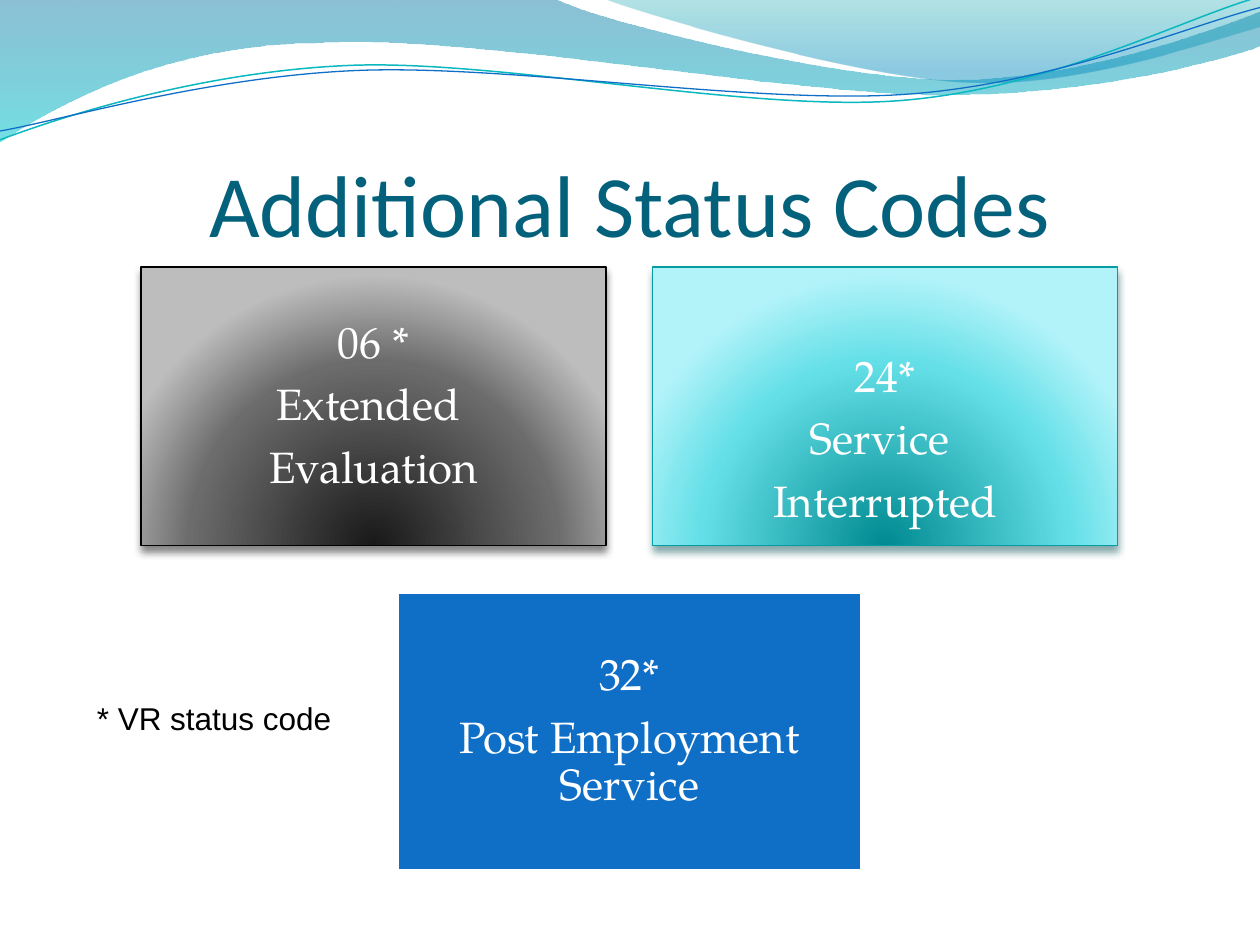
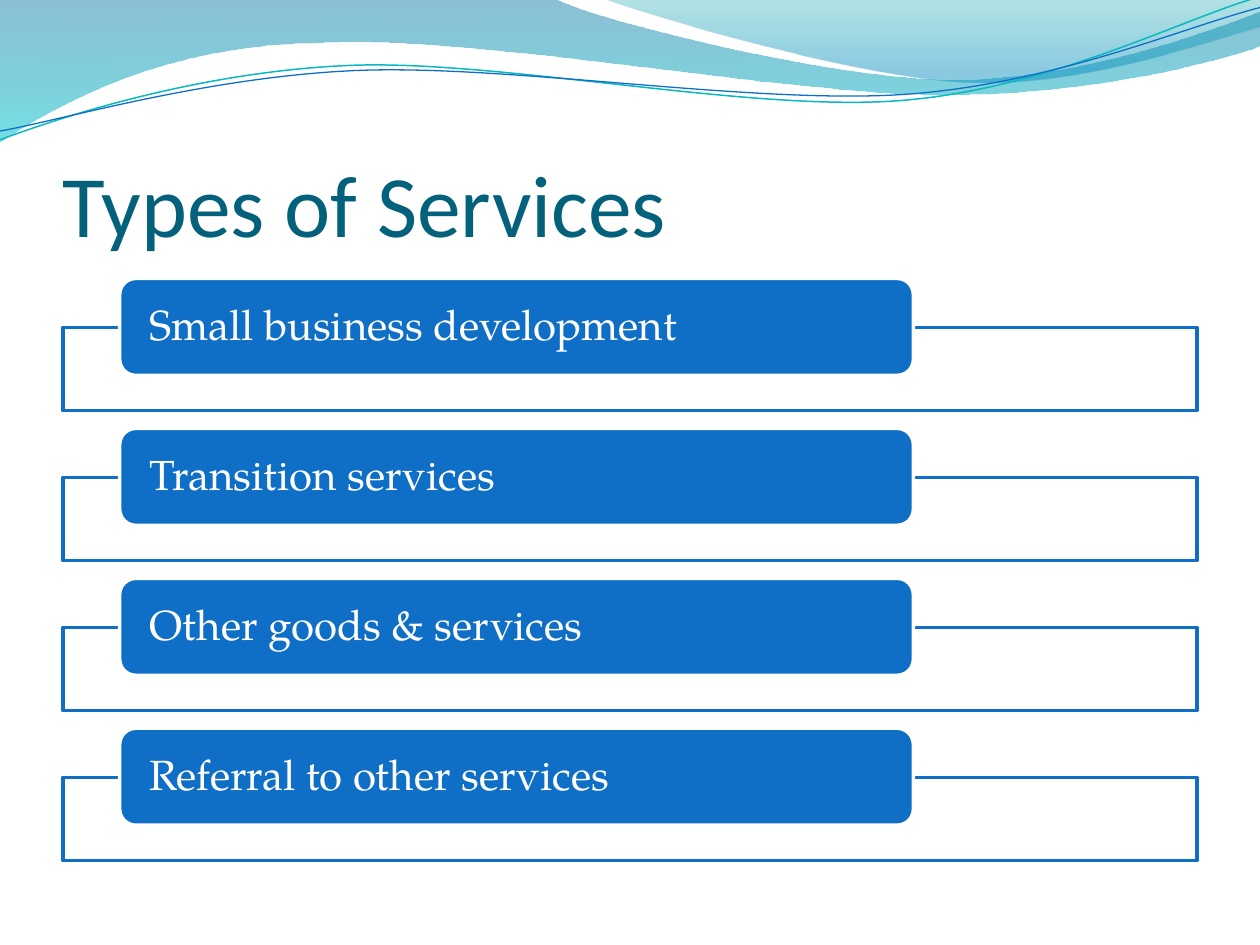
from lxml import etree
from pptx import Presentation
from pptx.dml.color import RGBColor
from pptx.enum.shapes import MSO_SHAPE
from pptx.enum.text import MSO_ANCHOR, PP_ALIGN
from pptx.oxml.ns import qn
from pptx.util import Inches, Pt

RECTANGLE, ROUNDED = MSO_SHAPE.RECTANGLE, MSO_SHAPE.ROUNDED_RECTANGLE
LEFT, CENTER = PP_ALIGN.LEFT, PP_ALIGN.CENTER
TOP, MIDDLE, BOTTOM = MSO_ANCHOR.TOP, MSO_ANCHOR.MIDDLE, MSO_ANCHOR.BOTTOM

BLUE, TEAL, TITLE_COLOR = "0F6FC6", "0AB8BF", "04617B"
WHITE, BLACK = "FFFFFF", "000000"
TITLE_FONT, BODY_FONT, NOTE_FONT = "Calibri", "TeX Gyre Pagella", "Arial"

# Outlines: a start point, then (x, y) for a line or six numbers for a Bezier curve.
WIDE_WAVE = [
    (0, -0.01), (4.4, -0.01),
    (4.76, 0.17, 6.64, 0.63, 7.58, 0.63), (8.53, 0.63, 9.58, 0.26, 10, 0.09),
    (10.01, 0.36),
    (9.83, 0.44, 8.7, 0.76, 7.46, 0.75), (6.22, 0.75, 3.82, 0.28, 2.57, 0.34),
    (1.29, 0.35, 0.46, 0.83, -0.01, 1.13), (0, -0.01),
]
RIGHT_WAVE = [
    (4.79, -0.01),
    (5.09, 0.11, 6.82, 0.62, 7.69, 0.65), (8.56, 0.69, 9.61, 0.32, 10, 0.21),
    (10, 0), (4.79, -0.01),
]
TEAL_CURVE = [
    (0, 1.11),
    (0.48, 0.93, 1.58, 0.57, 2.77, 0.52), (3.95, 0.47, 5.93, 0.89, 7.13, 0.8),
    (8.33, 0.71, 9.38, 0.15, 9.98, -0.02),
]
BLUE_CURVE = [
    (0, 1.04),
    (0.47, 0.96, 1.64, 0.61, 2.83, 0.56), (4.03, 0.51, 5.97, 0.83, 7.17, 0.75),
    (8.36, 0.67, 9.41, 0.21, 10, 0.06),
]

BOX_SIZE = (3.69, 2.21)
SERVICES = ["Small business development", "Transition services",
            "Other goods & services", "Referral to other services"]
SERVICE_TOP, SERVICE_PITCH = 2.21, 1.19


def rgb(color):
    return RGBColor.from_string(color)


def add_color(parent, color, opacity=100):
    element = etree.SubElement(parent, qn("a:srgbClr"), val=color)
    if opacity < 100:
        etree.SubElement(element, qn("a:alpha"), val=str(opacity * 1000))


def set_gradient(shape, stops, radial=False):
    """Fill with (position, colour, opacity) stops, downwards or from the bottom centre."""
    shape.fill.background()
    gradient = etree.Element(qn("a:gradFill"), rotWithShape="1")
    stop_list = etree.SubElement(gradient, qn("a:gsLst"))
    for position, color, opacity in stops:
        stop = etree.SubElement(stop_list, qn("a:gs"), pos=str(position * 1000))
        add_color(stop, color, opacity)
    if radial:
        circle = etree.SubElement(gradient, qn("a:path"))
        circle.set("path", "circle")
        etree.SubElement(circle, qn("a:fillToRect"),
                         l="50000", t="130000", r="50000", b="-30000")
    else:
        etree.SubElement(gradient, qn("a:lin"), ang="5400000", scaled="0")
    properties = shape._element.spPr
    properties.replace(properties.find(qn("a:noFill")), gradient)


def set_line(shape, color, width):
    if color is None:
        shape.line.fill.background()
        return
    shape.line.color.rgb = rgb(color)
    shape.line.width = Pt(width)


def add_shadow(shape, color):
    effects = shape._element.spPr.find(qn("a:effectLst"))
    shadow = etree.SubElement(effects, qn("a:outerShdw"), blurRad=str(Pt(4.5)),
                              dist=str(Pt(3)), dir="5400000", rotWithShape="0")
    add_color(shadow, color, 48)


def set_text(shape, lines, *, size, font, color, align=LEFT, anchor=MIDDLE,
             insets=(0.1, 0.05, 0.1, 0.05), line_spacing=None, space_after=0):
    """Write one paragraph per line; insets are left, top, right, bottom in inches."""
    frame = shape.text_frame
    frame.word_wrap = True
    frame.vertical_anchor = anchor
    (frame.margin_left, frame.margin_top,
     frame.margin_right, frame.margin_bottom) = map(Inches, insets)
    for index, line in enumerate(lines):
        paragraph = frame.add_paragraph() if index else frame.paragraphs[0]
        paragraph.alignment = align
        paragraph.line_spacing = line_spacing
        paragraph.space_after = Pt(space_after)
        run = paragraph.add_run()
        run.text = line
        run.font.size = Pt(size)
        run.font.name = font
        run.font.color.rgb = rgb(color)


def add_box(slide, kind, left, top, width, height, fill=None, line=None, line_width=2):
    shape = slide.shapes.add_shape(kind, *map(Inches, (left, top, width, height)))
    shape.shadow.inherit = False
    if fill:
        shape.fill.solid()
        shape.fill.fore_color.rgb = rgb(fill)
    set_line(shape, line, line_width)
    return shape


def add_text_box(slide, left, top, width, height, lines, **text_format):
    box = slide.shapes.add_textbox(*map(Inches, (left, top, width, height)))
    set_text(box, lines, **text_format)


def bend_curves(shape, outline):
    """Join the three line ends of each curved segment into one Bezier curve."""
    line_ends = iter(list(shape._element.iter(qn("a:lnTo"))))
    for segment in outline[1:]:
        first = next(line_ends)
        if len(segment) == 2:
            continue
        curve = etree.Element(qn("a:cubicBezTo"))
        first.addprevious(curve)
        for line_end in (first, next(line_ends), next(line_ends)):
            curve.append(line_end[0])
            line_end.getparent().remove(line_end)


def add_outline(slide, outline, stops=None, line=None, line_width=1):
    """Draw a closed gradient area when stops are given, else an open line."""
    points = [(Inches(segment[i]), Inches(segment[i + 1]))
              for segment in outline for i in range(0, len(segment), 2)]
    builder = slide.shapes.build_freeform(*points[0], scale=1.0)
    builder.add_line_segments(points[1:], close=bool(stops))
    shape = builder.convert_to_shape()
    bend_curves(shape, outline)
    shape.shadow.inherit = False
    if stops:
        set_gradient(shape, stops)
    else:
        shape.fill.background()
    set_line(shape, line, line_width)


def add_wave_slide(presentation, title, align):
    """Add a blank slide with the shared wave header and title."""
    slide = presentation.slides.add_slide(presentation.slide_layouts[6])
    add_outline(slide, WIDE_WAVE, stops=[(0, "0074A1", 45), (100, "00C6CF", 55)])
    add_outline(slide, RIGHT_WAVE, stops=[(0, "00A1A9", 30), (80, "008BBF", 45)])
    add_outline(slide, TEAL_CURVE, line=TEAL, line_width=0.85)
    add_outline(slide, BLUE_CURVE, line=BLUE, line_width=0.75)
    add_text_box(slide, 0.5, 0.77, 9, 1.25, [title], size=50, font=TITLE_FONT,
                 color=TITLE_COLOR, align=align, anchor=BOTTOM, insets=(0, 0.05, 0, 0))
    return slide


def add_status_box(slide, left, top, lines, fill=None, gradient=None,
                   line=WHITE, line_width=2, shadow=None, top_inset=0.1):
    box = add_box(slide, RECTANGLE, left, top, *BOX_SIZE, fill, line, line_width)
    if gradient:
        stops = [(position, color, 100) for position, color in zip((0, 68, 100), gradient)]
        set_gradient(box, stops, radial=True)
    if shadow:
        add_shadow(box, shadow)
    set_text(box, lines, size=25, font=BODY_FONT, color=WHITE, align=CENTER,
             insets=(0.1, top_inset, 0.1, 0.1), line_spacing=0.9, space_after=8.75)


def add_service(slide, top, name):
    add_box(slide, RECTANGLE, 0.5, top + 0.39, 9, 0.66, WHITE, BLUE)
    label = add_box(slide, ROUNDED, 0.95, top, 6.3, 0.77, BLUE, WHITE)
    set_text(label, [name], size=24, font=BODY_FONT, color=WHITE,
             insets=(0.2, 0, 0.2, 0), line_spacing=0.9)


def build_status_codes(presentation):
    slide = add_wave_slide(presentation, "Additional Status Codes", CENTER)
    add_status_box(slide, 1.12, 2.12, ["06 *", "Extended ", "Evaluation"],
                   gradient=("191919", "6C6C6C", "BDBDBD"),
                   line=BLACK, line_width=0.75, shadow=BLACK)
    add_status_box(slide, 5.18, 2.12, ["24*", "Service ", "Interrupted"],
                   gradient=("008A91", "64DFE7", "B1F3F9"),
                   line="069CA3", line_width=0.75, shadow="024B4E", top_inset=0.64)
    add_status_box(slide, 3.15, 4.7, ["32*", "Post Employment Service"], fill=BLUE)
    add_text_box(slide, 0.67, 5.5, 2.17, 0.4, ["* VR status code"],
                 size=18, font=NOTE_FONT, color=BLACK, anchor=TOP)


def build_services(presentation):
    slide = add_wave_slide(presentation, "Types of Services", LEFT)
    for row, name in enumerate(SERVICES):
        add_service(slide, SERVICE_TOP + row * SERVICE_PITCH, name)


def main():
    presentation = Presentation()
    presentation.slide_width = Inches(10)
    presentation.slide_height = Inches(7.5)
    build_status_codes(presentation)
    build_services(presentation)
    presentation.save("out.pptx")


if __name__ == "__main__":
    main()
